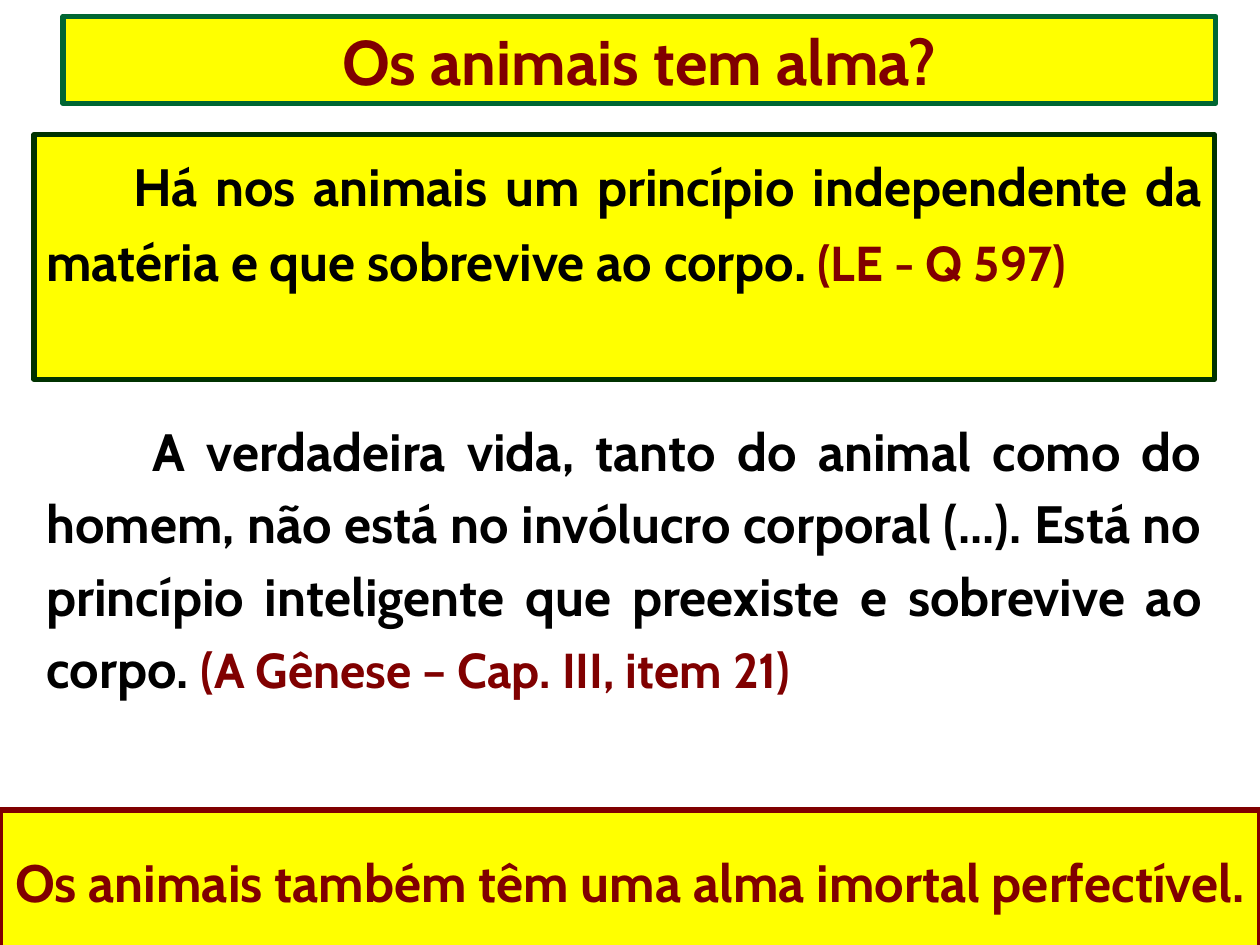
import pptx
import pptx.util
import pptx.dml.color
import pptx.enum.shapes
import pptx.enum.text

Pt = pptx.util.Pt
ALIGN = pptx.enum.text.PP_ALIGN
ANCHOR = pptx.enum.text.MSO_ANCHOR
COLORS = {"yellow": "FFFF00", "maroon": "800000", "black": "000000",
          "forest": "003300", "green": "006633"}

prs = pptx.Presentation()
prs.slide_width = pptx.util.Inches(10)
prs.slide_height = pptx.util.Inches(7.5)
s = prs.slides.add_slide(prs.slide_layouts[6])
U = prs.slide_width // 100  # grid unit: one hundredth of the slide width


def rgb(name):
    return pptx.dml.color.RGBColor.from_string(COLORS[name])


def add_block(box, runs, border=None, align=ALIGN.CENTER, anchor=ANCHOR.MIDDLE):
    place = [round(v * U) for v in box]
    if border:
        sp = s.shapes.add_shape(pptx.enum.shapes.MSO_SHAPE.RECTANGLE, *place)
        sp.shadow.inherit = False
        sp.fill.solid()
        sp.fill.fore_color.rgb = rgb("yellow")
        sp.line.color.rgb = rgb(border)
        sp.line.width = Pt(3)
    else:
        sp = s.shapes.add_textbox(*place)
    tf = sp.text_frame
    tf.word_wrap = True
    tf.vertical_anchor = anchor
    p = tf.paragraphs[0]
    p.alignment = align
    for text, size, color in runs:
        r = p.add_run()
        r.text = text
        r.font.name = "Cabin"
        r.font.size = Pt(size)
        r.font.bold = True
        r.font.color.rgb = rgb(color)
    return p


# Quotations: box, border, line spacing, space around, first-line indent, runs
quotes = [
    ((2.7, 10.7, 93.7, 19.4), "forest", 1.2, 9, 6.9, [
        ("Há nos animais um princípio independente da matéria "
         "e que sobrevive ao corpo.", 30, "black"),
        (" ", 28, "black"),
        ("(LE - Q 597)", 28, "maroon")]),
    ((2.7, 32, 93.7, 29.4), None, 1.15, 7, 8.4, [
        ("A verdadeira vida, tanto do animal como do homem, não está no "
         "invólucro corporal (...). Está no princípio inteligente que "
         "preexiste e sobrevive ao corpo. ", 30, "black"),
        ("(A Gênese – Cap. III, item 21)", 28, "maroon")]),
]
for box, border, spacing, gap, indent, runs in quotes:
    p = add_block(box, runs, border, ALIGN.JUSTIFY, ANCHOR.TOP)
    p.line_spacing = spacing
    p.space_before = p.space_after = Pt(gap)
    pPr = p._p.get_or_add_pPr()
    pPr.set("marL", "0")
    pPr.set("indent", str(round(indent * U)))

# Title
add_block((5, 1.3, 91.5, 6.9), [("Os animais tem alma?", 36, "maroon")], "green")

# Conclusion across the foot of the slide
add_block((0, 64.3, 100, 11.4),
          [("Os animais também têm uma alma imortal perfectível.", 30, "maroon")],
          "maroon")

prs.save("out.pptx")
